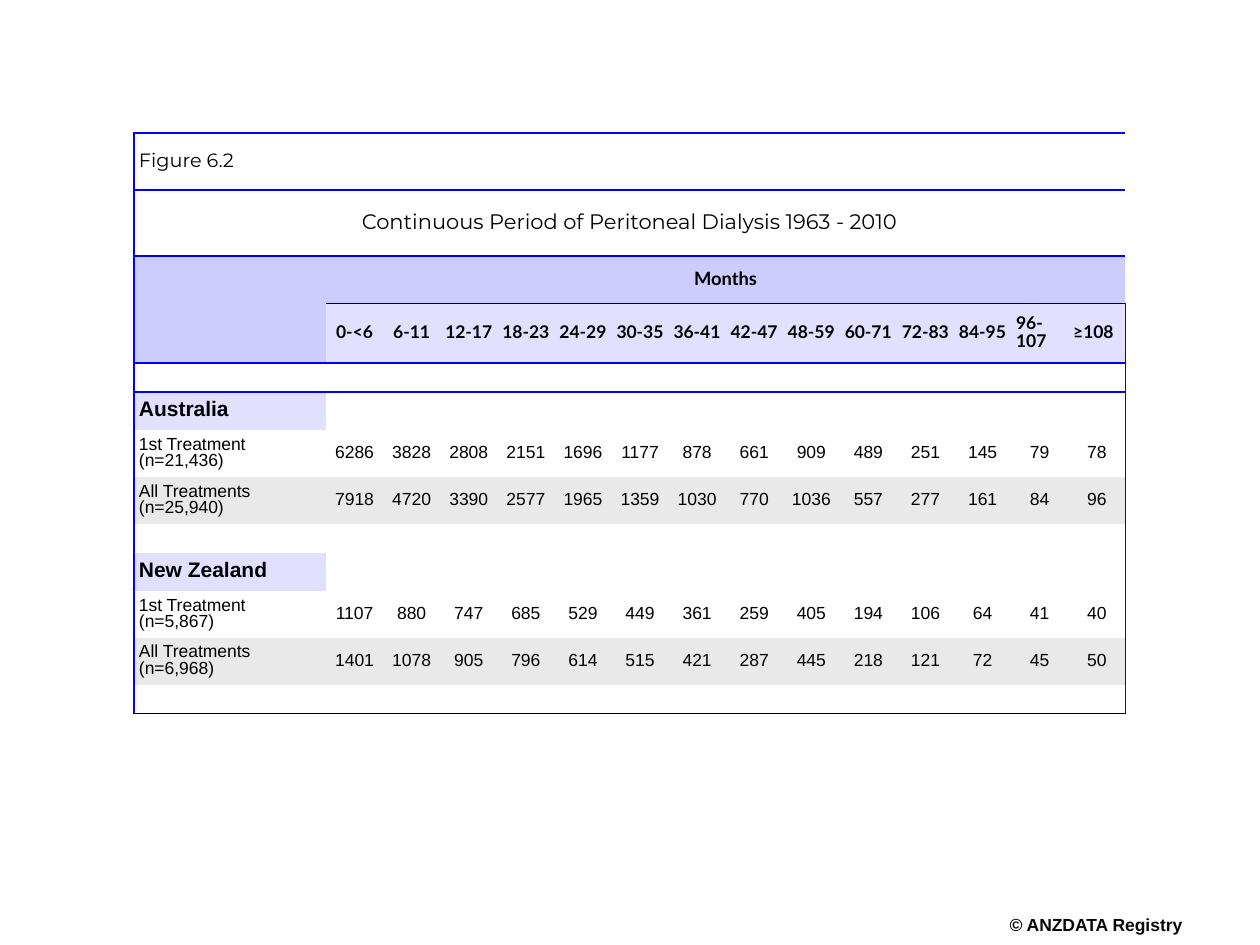
from lxml.etree import SubElement
from pptx import Presentation
from pptx.dml.color import RGBColor
from pptx.enum.text import MSO_ANCHOR as ANCHOR, PP_ALIGN as ALIGN
from pptx.oxml.ns import qn
from pptx.util import Emu, Pt

BLACK = RGBColor(0x00, 0x00, 0x00)
INK = RGBColor(0x08, 0x08, 0x08)
BLUE = RGBColor(0x00, 0x00, 0xFF)
LAVENDER = RGBColor(0xCC, 0xCC, 0xFF)
PALE = RGBColor(0xE1, 0xE1, 0xFF)
GREY = RGBColor(0xE9, 0xE9, 0xE9)

NO_STYLE = "{2D5ABB26-0587-4C30-8999-92F81FD0307C}"
FRAME = (BLUE, 1)
HAIRLINE = (BLACK, 0.5)

# Text formats
FIGURE = {"name": "Montserrat", "size": Pt(11)}
TITLE = {"name": "Montserrat", "size": Pt(12)}
MONTHS = {"name": "Lato", "size": Pt(10.5), "bold": True}
PERIOD = {"name": "Lato", "size": Pt(10), "bold": True}
COUNTRY = {"name": "Arial", "size": Pt(12), "bold": True}
BODY = {"name": "Arial", "size": Pt(10), "bold": False}
CREDIT = {"name": "Arial", "size": Pt(10), "bold": True}

# Table content
PERIODS = ["0-<6", "6-11", "12-17", "18-23", "24-29", "30-35", "36-41",
           "42-47", "48-59", "60-71", "72-83", "84-95", "96-107", "≥108"]
COUNTRIES = [
    ("Australia", [
        ("1st Treatment (n=21,436)",
         [6286, 3828, 2808, 2151, 1696, 1177, 878, 661, 909, 489, 251, 145, 79, 78]),
        ("All Treatments (n=25,940)",
         [7918, 4720, 3390, 2577, 1965, 1359, 1030, 770, 1036, 557, 277, 161, 84, 96]),
    ]),
    ("New Zealand", [
        ("1st Treatment (n=5,867)",
         [1107, 880, 747, 685, 529, 449, 361, 259, 405, 194, 106, 64, 41, 40]),
        ("All Treatments (n=6,968)",
         [1401, 1078, 905, 796, 614, 515, 421, 287, 445, 218, 121, 72, 45, 50]),
    ]),
]
HEADER_ROWS = [57, 66, 47, 60]
COUNTRY_ROWS = [29, 38, 47, 47]
ROWS = HEADER_ROWS + COUNTRY_ROWS * len(COUNTRIES) + [29]
LABEL_W, PERIODS_W = 192, 800
LAST_ROW, LAST_COL = len(ROWS) - 1, len(PERIODS)


def px(n):
    return Emu(round(n * 914400 / 126))


class Deck:
    def __init__(self):
        self.prs = Presentation()
        self.prs.slide_width, self.prs.slide_height = px(1260), px(945)
        self.s = self.prs.slides.add_slide(self.prs.slide_layouts[6])

    def add_run(self, p, text, style, color=BLACK, **layout):
        for name, value in {"line_spacing": 0.85, **layout}.items():
            setattr(p, name, value)
        r = p.add_run()
        r.text = text
        for name, value in style.items():
            setattr(r.font, name, value)
        r.font.color.rgb = color

    def text(self, x, y, w, h, text, style, color):
        tf = self.s.shapes.add_textbox(px(x), px(y), px(w), px(h)).text_frame
        for side in ("left", "top", "right", "bottom"):
            setattr(tf, f"margin_{side}", 0)
        tf.word_wrap = False
        self.add_run(tf.paragraphs[0], text, style, color, alignment=ALIGN.CENTER)

    def table(self, x, y, rows, label_w, rest_w, cols):
        frame = self.s.shapes.add_table(len(rows), cols + 1, px(x), px(y),
                                        px(label_w + rest_w), px(sum(rows)))
        t = frame.table
        t.first_row = t.horz_banding = False
        frame._element.find(".//" + qn("a:tableStyleId")).text = NO_STYLE
        for row, height in zip(t.rows, rows):
            row.height = px(height)
        for i, col in enumerate(t.columns):
            col.width = px(rest_w / cols if i else label_w)
        return t

    def cell(self, cell, borders, fill):
        cell.margin_left = cell.margin_right = px(5)
        cell.margin_top = cell.margin_bottom = px(3)
        cell.vertical_anchor = ANCHOR.MIDDLE
        for side in "LRTB":
            if side in borders:
                color, width = borders[side]
                ln = SubElement(cell._tc.get_or_add_tcPr(), qn(f"a:ln{side}"),
                                w=str(int(Pt(width))))
                SubElement(SubElement(ln, qn("a:solidFill")),
                           qn("a:srgbClr"), val=str(color))
        if fill is None:
            cell.fill.background()
        else:
            cell.fill.solid()
            cell.fill.fore_color.rgb = fill

    def keep_small(self, cell):
        SubElement(cell.text_frame.paragraphs[0]._p, qn("a:endParaRPr"), sz="1000")


def borders_at(row, col):
    lines = {0: FRAME, 1: FRAME, 2: FRAME, 4: FRAME, LAST_ROW + 1: HAIRLINE}
    if col:
        lines[3] = HAIRLINE
    edges = {"T": lines.get(row), "B": lines.get(row + 1),
             "L": FRAME if col == 0 else None,
             "R": FRAME if col == LAST_COL else None}
    return {side: line for side, line in edges.items() if line}


def fill_at(row, col):
    if row in (2, 3):
        return PALE if row == 3 and col else LAVENDER
    if len(HEADER_ROWS) <= row < LAST_ROW:
        part = (row - len(HEADER_ROWS)) % len(COUNTRY_ROWS)
        if part == 3:
            return GREY
        if part == 1 and col == 0:
            return PALE
    return None


def main():
    deck = Deck()

    # Table grid
    t = deck.table(134, 133, ROWS, LABEL_W, PERIODS_W, len(PERIODS))
    for row in range(len(ROWS)):
        for col in range(LAST_COL + 1):
            deck.cell(t.cell(row, col), borders_at(row, col), fill_at(row, col))
    for first, last in [((0, 0), (0, LAST_COL)), ((1, 0), (1, LAST_COL)),
                        ((2, 0), (3, 0)), ((2, 1), (2, LAST_COL))]:
        t.cell(*first).merge(t.cell(*last))

    def put(row, col, text, style, **layout):
        p = t.cell(row, col).text_frame.paragraphs[0]
        deck.add_run(p, text, style, **layout)

    # Headings
    put(0, 0, "Figure 6.2", FIGURE)
    put(1, 0, "Continuous Period of Peritoneal Dialysis 1963 - 2010", TITLE,
        alignment=ALIGN.CENTER)
    put(2, 1, "Months", MONTHS, alignment=ALIGN.CENTER)
    for col, period in enumerate(PERIODS, 1):
        put(3, col, period, PERIOD,
            alignment=ALIGN.CENTER if col <= 6 else ALIGN.LEFT)

    # Countries
    for i, (country, treatments) in enumerate(COUNTRIES):
        top = len(HEADER_ROWS) + i * len(COUNTRY_ROWS)
        put(top + 1, 0, country, COUNTRY, line_spacing=0.75)
        for row, (label, counts) in enumerate(treatments, top + 2):
            put(row, 0, label, BODY, space_after=Pt(14))
            for col, count in enumerate(counts, 1):
                put(row, col, str(count), BODY, space_after=Pt(14),
                    alignment=ALIGN.CENTER)

    # Empty cells must not stretch the low rows
    for cell in t.iter_cells():
        if not cell.text_frame.text:
            deck.keep_small(cell)

    # Copyright line
    deck.text(1007, 917, 178, 21, "© ANZDATA Registry", CREDIT, INK)
    deck.prs.save("out.pptx")


if __name__ == "__main__":
    main()
